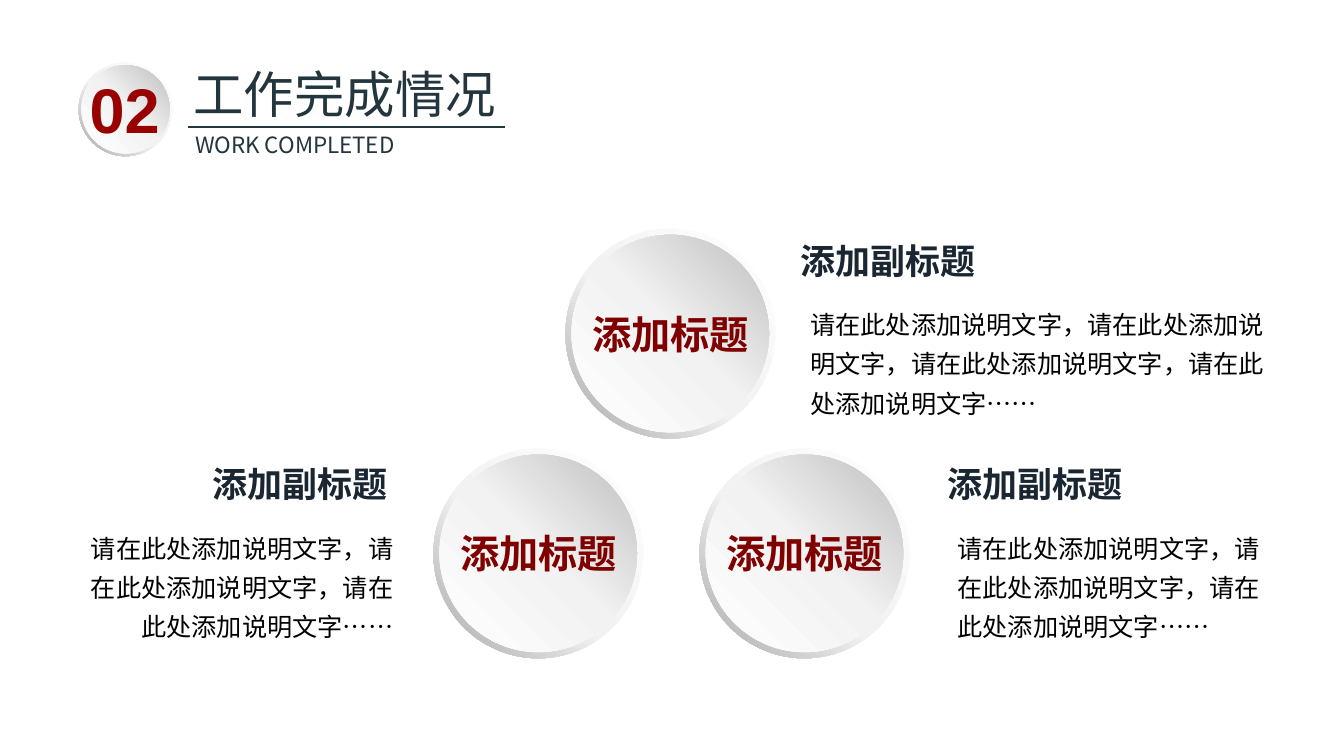
from copy import deepcopy
from dataclasses import dataclass

from pptx import Presentation
from pptx.dml.color import RGBColor
from pptx.enum.shapes import MSO_CONNECTOR, MSO_SHAPE
from pptx.enum.text import MSO_ANCHOR, MSO_AUTO_SIZE, PP_ALIGN
from pptx.oxml import parse_xml
from pptx.oxml.ns import nsdecls, qn
from pptx.shapes.autoshape import Shape
from pptx.shapes.shapetree import GroupShapes
from pptx.util import Pt

SANS = "Noto Sans CJK SC"
SLATE = "23353D"
RING = ((0, "FFFFFF"), (0.55, "F2F2F2"), (1, "A6A6A6"))
FACE = ((0, "FFFFFF"), (0.51, "F2F2F2"), (1, "BFBFBF"))
NOTE = "请在此处添加说明文字"


@dataclass(frozen=True)
class Box:
    """A place and size in points."""

    x: float
    y: float
    w: float
    h: float


@dataclass(frozen=True)
class Style:
    """The look of one text."""

    size: float
    hue: str
    bold: bool = False
    font: str = SANS
    align: PP_ALIGN = PP_ALIGN.LEFT
    space: float = 1.0
    wrap: bool = True
    inset: tuple[float, float] = (7.2, 3.6)


@dataclass(frozen=True)
class Topic:
    """A disc with its heading and note."""

    x: float
    y: float
    head: Box
    note: Box
    count: int
    align: PP_ALIGN = PP_ALIGN.LEFT


def color(code: str) -> RGBColor:
    """Turn a hex string into a colour."""
    return RGBColor.from_string(code)


def place(shape: Shape, box: Box) -> None:
    """Move and size a shape."""
    shape.left, shape.top = Pt(box.x), Pt(box.y)
    shape.width, shape.height = Pt(box.w), Pt(box.h)


def write(shape: Shape, text: str, style: Style) -> None:
    """Fill a shape with styled text."""
    frame = shape.text_frame
    frame.text = text
    frame.word_wrap = style.wrap
    frame.auto_size = MSO_AUTO_SIZE.SHAPE_TO_FIT_TEXT
    frame.vertical_anchor = MSO_ANCHOR.TOP
    frame.margin_left = frame.margin_right = Pt(style.inset[0])
    frame.margin_top = frame.margin_bottom = Pt(style.inset[1])
    line = frame.paragraphs[0]
    line.alignment = style.align
    line.line_spacing = style.space
    line.space_before = Pt(0)
    font = line.runs[0].font
    font.size, font.bold, font.name = Pt(style.size), style.bold, style.font
    font.color.rgb = color(style.hue)
    east = parse_xml(f'<a:ea {nsdecls("a")} typeface="{style.font}"/>')
    line.runs[0].font._element.find(qn("a:latin")).addnext(east)


def label(shapes: GroupShapes, box: Box, text: str, style: Style) -> None:
    """Add a text box."""
    shape = shapes.add_textbox(0, 0, 0, 0)
    place(shape, box)
    write(shape, text, style)


def shade(shape: Shape, stops: tuple, angle: float) -> None:
    """Give a shape a three-stop gradient without outline or shadow."""
    shape.shadow.inherit = False
    shape.line.fill.background()
    shape.fill.gradient()
    first = shape._element.spPr.find(".//" + qn("a:gs"))
    first.addnext(deepcopy(first))
    for stop, (spot, hue) in zip(shape.fill.gradient_stops, stops):
        stop.position = spot
        stop.color.rgb = color(hue)
    shape.fill.gradient_angle = angle


def disc(shapes: GroupShapes, x: float, y: float, size: float) -> None:
    """Draw a ring with a raised face inside it."""
    ring = shapes.add_shape(MSO_SHAPE.DONUT, Pt(x), Pt(y), Pt(size), Pt(size))
    ring.adjustments[0] = 0.062
    shade(ring, RING, 225)
    gap = size * 0.029
    side = size - 2 * gap
    face = shapes.add_shape(
        MSO_SHAPE.OVAL, Pt(x + gap), Pt(y + gap), Pt(side), Pt(side)
    )
    shade(face, FACE, 45)


def draw(shapes: GroupShapes, topic: Topic) -> None:
    """Draw one topic."""
    disc(shapes, topic.x, topic.y, 149.8)
    spot = Box(topic.x + 12.2, topic.y + 54.4, 127.4, 41)
    label(shapes, spot, "添加标题", Style(28, "800000", True, wrap=False))
    head = Style(25, "1A2732", True, align=topic.align, inset=(0, 0))
    label(shapes, topic.head, "添加副标题", head)
    note = Style(18, "000000", align=topic.align, space=1.3)
    label(shapes, topic.note, "，".join([NOTE] * topic.count) + "……", note)


TOPICS = (
    Topic(309.6, 320.4, Box(118.8, 330.5, 157.7, 30.2),
          Box(51.1, 370.8, 236.9, 92.2), 3, PP_ALIGN.RIGHT),
    Topic(499.7, 320.4, Box(676.8, 330.5, 157.7, 30.2),
          Box(676.8, 370.8, 236.9, 92.2), 3),
    Topic(403.9, 163.4, Box(571.7, 171.4, 157.7, 30.2),
          Box(571.7, 211, 342.7, 89.3), 4),
)


def main() -> None:
    """Build and save the slide."""
    deck = Presentation()
    deck.slide_width, deck.slide_height = Pt(960), Pt(540)
    slide = deck.slides.add_slide(deck.slide_layouts[5])
    shapes = slide.shapes
    place(shapes.title, Box(133.2, 41.8, 229, 49))
    write(shapes.title, "工作完成情况", Style(36, SLATE, wrap=False, inset=(5, 3)))
    label(shapes, Box(134.6, 90.7, 226.1, 24.5), "WORK COMPLETED",
          Style(16, SLATE, align=PP_ALIGN.JUSTIFY, inset=(5, 3)))
    rule = shapes.add_connector(
        MSO_CONNECTOR.STRAIGHT, Pt(134.6), Pt(90.7), Pt(360.7), Pt(90.7)
    )
    rule.line.color.rgb = color(SLATE)
    rule.line.width = Pt(1.75)
    rule._element.spPr.append(parse_xml(f'<a:effectLst {nsdecls("a")}/>'))
    for topic in TOPICS:
        draw(shapes.add_group_shape().shapes, topic)
    badge = shapes.add_group_shape().shapes
    disc(badge, 56.2, 44.6, 67)
    label(badge, Box(56.9, 46.8, 64.8, 61.9), "02",
          Style(45, "990000", True, "Arial", wrap=False))
    deck.save("out.pptx")


if __name__ == "__main__":
    main()
